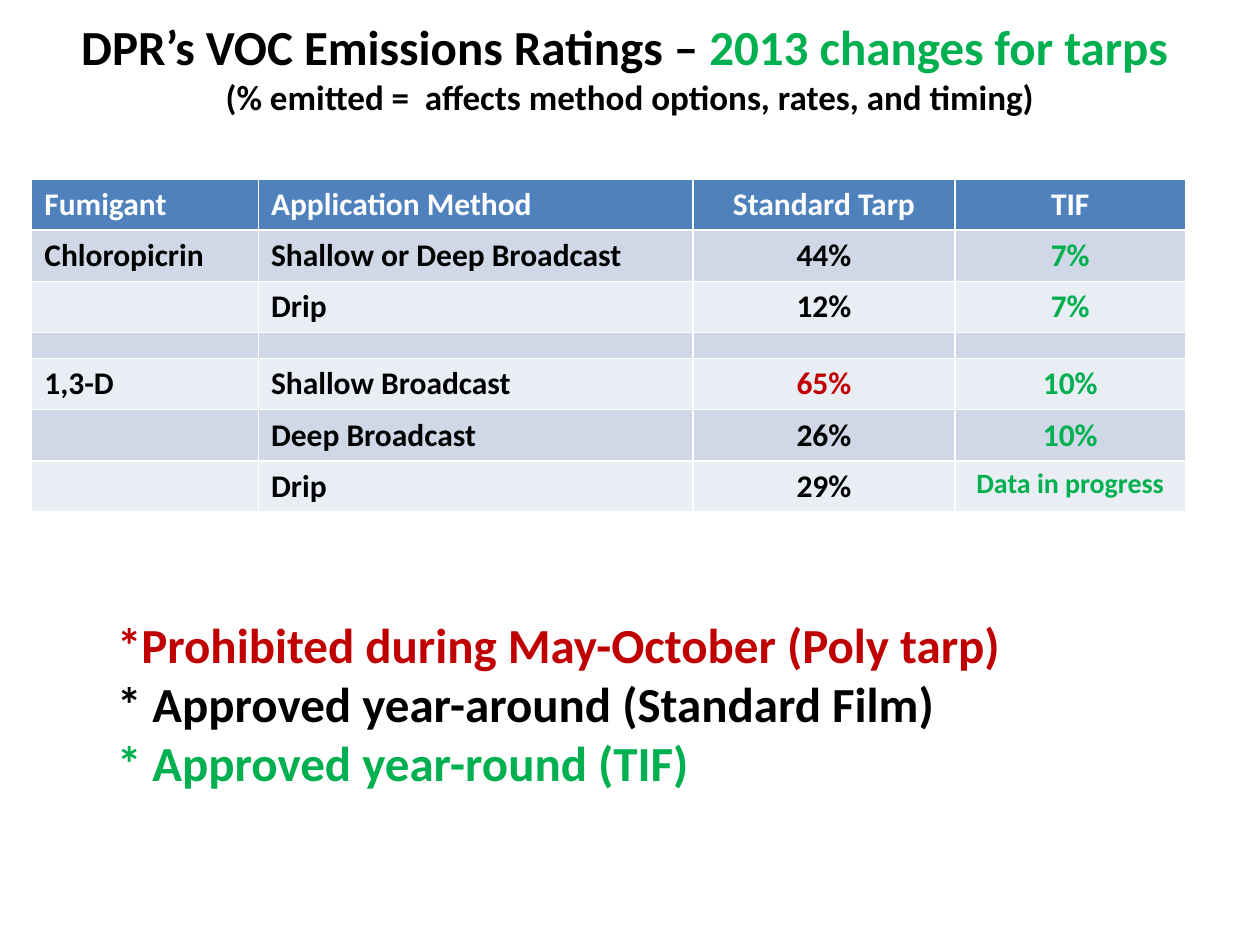
from dataclasses import dataclass

from pptx import Presentation
from pptx.dml.color import RGBColor
from pptx.enum.text import MSO_ANCHOR, PP_ALIGN
from pptx.util import Cm, Pt


@dataclass(frozen=True)
class Theme:
    font: str = "Calibri"
    heading: Pt = Pt(28)
    subtitle: Pt = Pt(20)
    body: Pt = Pt(18)
    small: Pt = Pt(16)
    spacer: Pt = Pt(6)
    black: RGBColor = RGBColor(0x00, 0x00, 0x00)
    white: RGBColor = RGBColor(0xFF, 0xFF, 0xFF)
    green: RGBColor = RGBColor(0x00, 0xB0, 0x50)
    red: RGBColor = RGBColor(0xC0, 0x00, 0x00)
    header: RGBColor = RGBColor(0x4F, 0x81, 0xBD)
    bands: tuple = (RGBColor(0xE9, 0xED, 0xF4), RGBColor(0xD0, 0xD8, 0xE8))


theme = Theme()


def style(paragraph, size, color, alignment=PP_ALIGN.LEFT):
    paragraph.alignment = alignment
    font = paragraph.font
    font.name, font.size, font.bold = theme.font, size, True
    font.color.rgb = color


presentation = Presentation()
presentation.slide_width, presentation.slide_height = Cm(25.4), Cm(19.05)
slide = presentation.slides.add_slide(presentation.slide_layouts[5])

# Title: main line with a green ending, then a smaller explanation
title = slide.shapes.title
title.left, title.top, title.width, title.height = Cm(0), Cm(0.2), Cm(25.4), Cm(2.31)
title_frame = title.text_frame
title_frame.vertical_anchor = MSO_ANCHOR.TOP
heading = title_frame.paragraphs[0]
style(heading, theme.heading, theme.black, PP_ALIGN.CENTER)
for text, color in (
    ("DPR’s VOC Emissions Ratings – ", theme.black),
    ("2013 changes for tarps ", theme.green),
):
    run = heading.add_run()
    run.text = text
    run.font.color.rgb = color
subtitle = title_frame.add_paragraph()
subtitle.text = "(% emitted =  affects method options, rates, and timing)"
style(subtitle, theme.subtitle, theme.black, PP_ALIGN.CENTER)

# Emission ratings
ratings = [
    ("Fumigant", "Application Method", "Standard Tarp", "TIF"),
    ("Chloropicrin", "Shallow or Deep Broadcast", "44%", "7%"),
    ("", "Drip", "12%", "7%"),
    ("", "", "", ""),
    ("1,3-D", "Shallow Broadcast", "65%", "10%"),
    ("", "Deep Broadcast", "26%", "10%"),
    ("", "Drip", "29%", "Data in progress"),
]
column_widths = [Cm(4.57), Cm(8.76), Cm(5.28), Cm(4.65)]
row_heights = [Cm(1.03) if any(row) else Cm(0.53) for row in ratings]
table = slide.shapes.add_table(
    len(ratings), len(column_widths), Cm(0.64), Cm(3.61),
    sum(column_widths), sum(row_heights),
).table
for column, width in zip(table.columns, column_widths):
    column.width = width

for row_index, (row, height) in enumerate(zip(ratings, row_heights)):
    table.rows[row_index].height = height
    for column_index, text in enumerate(row):
        cell = table.cell(row_index, column_index)
        cell.fill.solid()
        cell.fill.fore_color.rgb = theme.bands[row_index % 2] if row_index else theme.header
        paragraph = cell.text_frame.paragraphs[0]
        if not any(row):
            # An empty paragraph takes its height from its end mark
            paragraph._p.get_or_add_endParaRPr().set("sz", str(int(theme.spacer.pt * 100)))
            cell.margin_top = cell.margin_bottom = Cm(0.1)
        if not text:
            continue
        paragraph.text = text
        if row_index == 0:
            color = theme.white
        elif column_index == 3:
            color = theme.green
        else:
            color = theme.red if text == "65%" else theme.black
        size = theme.small if text == "Data in progress" else theme.body
        style(paragraph, size, color, PP_ALIGN.CENTER if column_index > 1 else PP_ALIGN.LEFT)

# Legend for the colours of the ratings
legend = slide.shapes.add_textbox(Cm(2.11), Cm(12.27), Cm(21.16), Cm(3.84))
legend_frame = legend.text_frame
legend_frame.word_wrap = True
legend_lines = [
    ("*Prohibited during May-October (Poly tarp)", theme.red),
    ("* Approved year-around (Standard Film)", theme.black),
    ("* Approved year-round (TIF)", theme.green),
]
for index, (text, color) in enumerate(legend_lines):
    paragraph = legend_frame.add_paragraph() if index else legend_frame.paragraphs[0]
    paragraph.text = text
    style(paragraph, theme.heading, color)

presentation.save("out.pptx")
